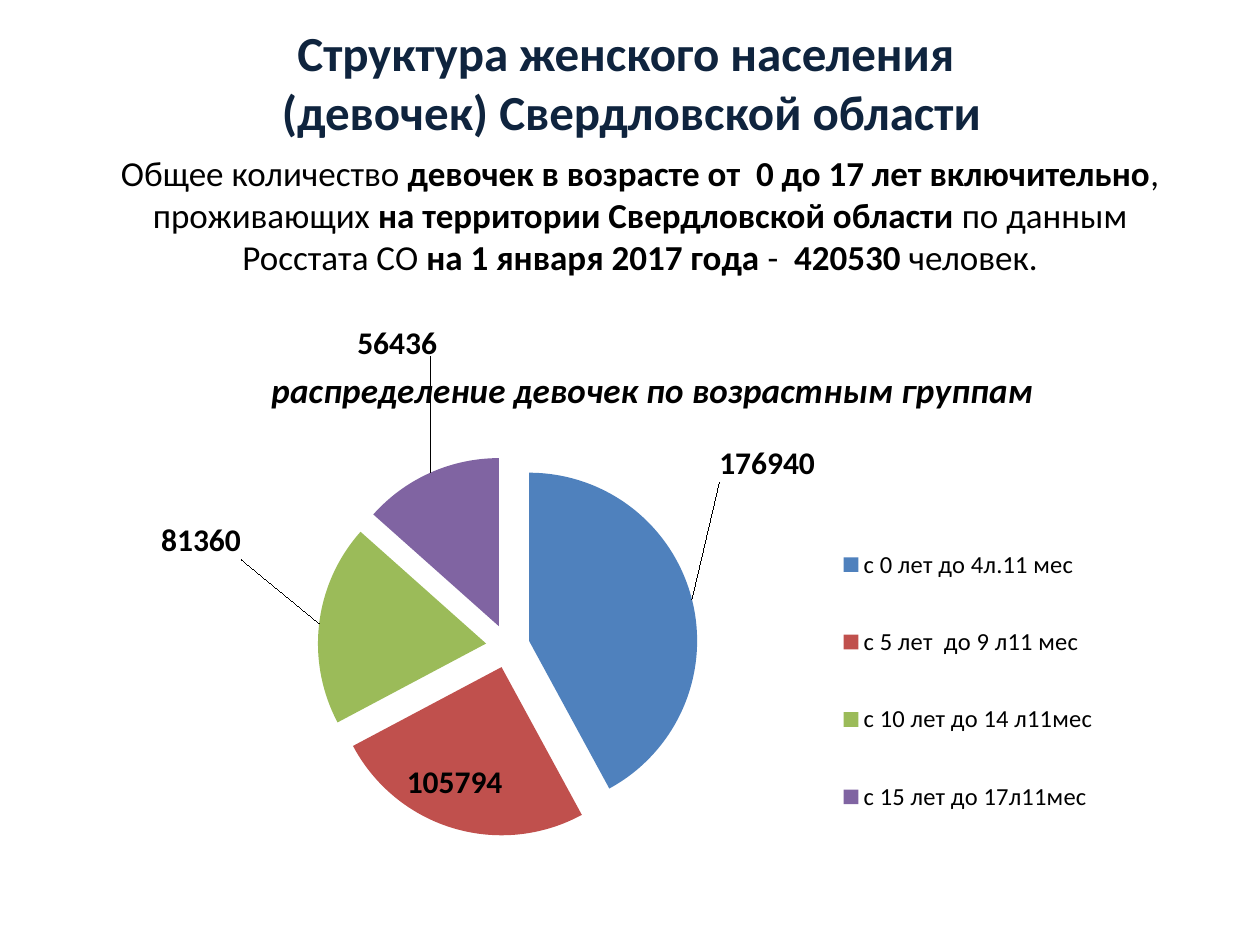
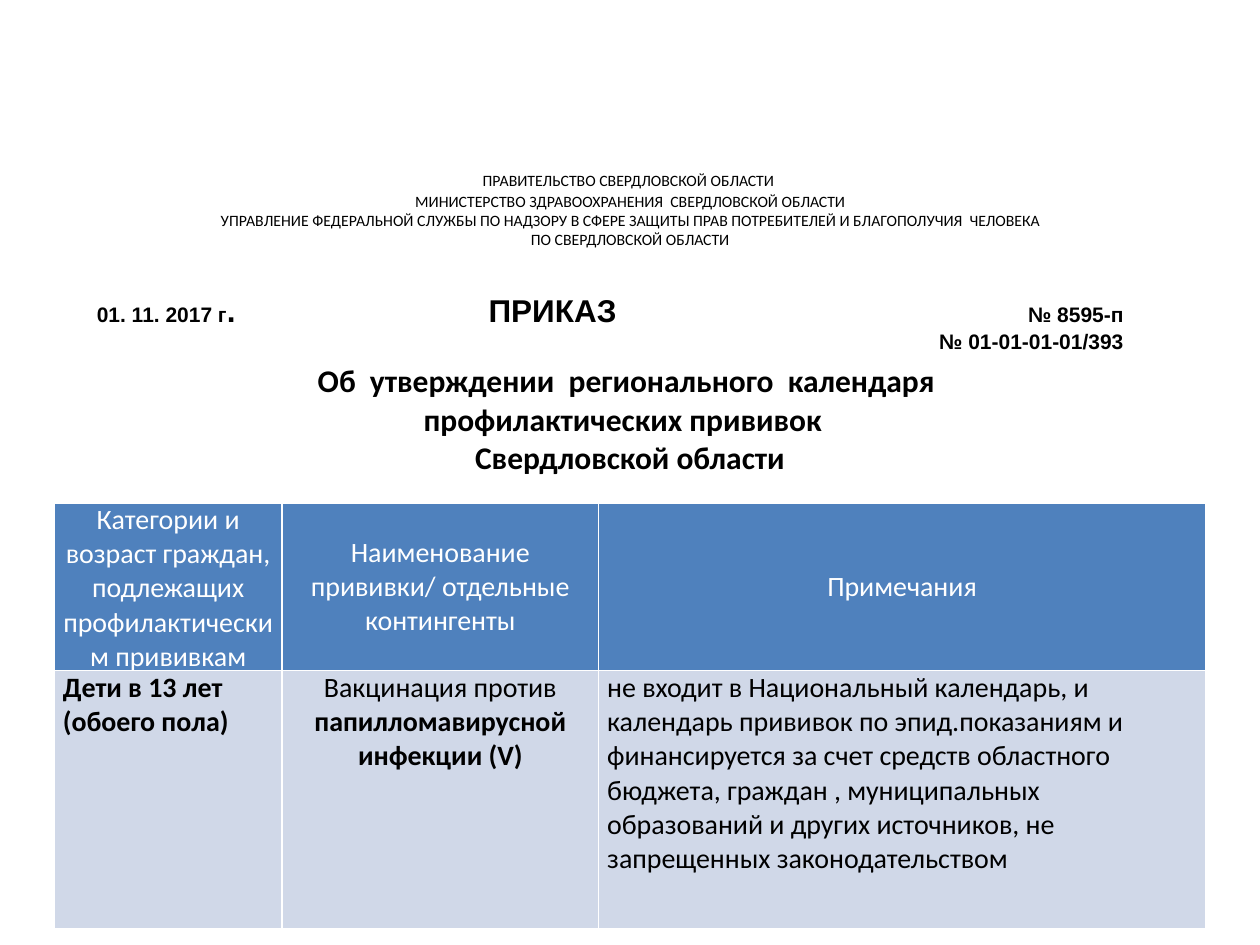
import pptx
import pptx.chart.data
import pptx.dml.color
import pptx.enum.chart
import pptx.enum.text
import pptx.oxml
import pptx.oxml.ns
import pptx.util
from lxml import etree

Inches = pptx.util.Inches
qn = pptx.oxml.ns.qn
CENTER = pptx.enum.text.PP_ALIGN.CENTER
LEFT = pptx.enum.text.PP_ALIGN.LEFT
MIDDLE = pptx.enum.text.MSO_ANCHOR.MIDDLE
TOP = pptx.enum.text.MSO_ANCHOR.TOP

BLACK, WHITE, NAVY = "000000", "FFFFFF", "0F243E"
BLUE, PALE_BLUE = "4F81BD", "D0D8E8"

AGE_GROUPS = [
    ("с 0 лет до 4л.11 мес", 176940, BLUE),
    ("с 5 лет  до 9 л11 мес", 105794, "C0504D"),
    ("с 10 лет до 14 л11мес", 81360, "9BBB59"),
    ("с 15 лет до 17л11мес", 56436, "8064A2"),
]
LABEL_SHIFTS = {0: (0.02, -0.2), 2: (-0.07, -0.11), 3: (0.01, -0.19)}


def rgb(value):
    return pptx.dml.color.RGBColor.from_string(value)


def format_font(font, size, color=BLACK, bold=False, italic=False, name="Calibri"):
    font.size = pptx.util.Pt(size)
    font.color.rgb = rgb(color)
    font.bold, font.italic, font.name = bold, italic, name


def add_text(para, text, **style):
    for index, line in enumerate(text.split("\n")):
        if index:
            para.add_line_break()
        span = para.add_run()
        span.text = line
        format_font(span.font, **style)


def write_paras(frame, paras, align=CENTER, **style):
    for index, spans in enumerate(paras):
        para = frame.add_paragraph() if index else frame.paragraphs[0]
        para.alignment = align
        for text, bold in spans:
            add_text(para, text, bold=bold, **style)


def add_box(page, box, anchor=TOP):
    frame = page.shapes.add_textbox(*map(Inches, box)).text_frame
    frame.word_wrap = True
    frame.vertical_anchor = anchor
    return frame


def add_table(page, box, widths, heights):
    table = page.shapes.add_table(len(heights), len(widths), *map(Inches, box)).table
    table.first_row = table.horz_banding = False
    for column, width in zip(table.columns, widths):
        column.width = Inches(width)
    for row, height in zip(table.rows, heights):
        row.height = Inches(height)
    return table


def format_cell(cell, paras, fill=None, anchor=TOP, margin=0.07, top=0, **style):
    cell.margin_left = cell.margin_right = Inches(margin)
    cell.margin_top, cell.margin_bottom = Inches(top), 0
    cell.vertical_anchor = anchor
    properties = cell._tc.get_or_add_tcPr()
    for side in ("lnL", "lnR", "lnT", "lnB"):
        line = etree.SubElement(properties, qn("a:" + side), w="12700")
        paint = etree.SubElement(line, qn("a:solidFill"))
        etree.SubElement(paint, qn("a:srgbClr"), val=WHITE)
    if fill:
        cell.fill.solid()
        cell.fill.fore_color.rgb = rgb(fill)
    else:
        cell.fill.background()
    write_paras(cell.text_frame, paras, **style)


def set_layout(parent, index, absolute=True, target=None, **lengths):
    for old in parent.findall(qn("c:layout")):
        parent.remove(old)
    layout = etree.Element(qn("c:layout"))
    manual = etree.SubElement(layout, qn("c:manualLayout"))
    if target:
        etree.SubElement(manual, qn("c:layoutTarget"), val=target)
    if absolute:
        for mode in ("xMode", "yMode"):
            etree.SubElement(manual, qn("c:" + mode), val="edge")
    for key, value in lengths.items():
        etree.SubElement(manual, qn("c:" + key), val=str(value))
    parent.insert(index, layout)


def add_age_chart(page, box):
    names, counts, colors = zip(*AGE_GROUPS)
    data = pptx.chart.data.CategoryChartData()
    data.categories = names
    data.add_series("Series 1", counts)
    kind = pptx.enum.chart.XL_CHART_TYPE.PIE
    chart = page.shapes.add_chart(kind, *map(Inches, box), data).chart
    format_font(chart.font, 18)

    chart.has_title = True
    add_text(chart.chart_title.text_frame.paragraphs[0],
             "распределение девочек по возрастным группам",
             size=20, bold=True, italic=True)
    set_layout(chart.chart_title._element, 1, x=0.12, y=0.06)

    chart.has_legend = True
    chart.legend.position = pptx.enum.chart.XL_LEGEND_POSITION.RIGHT
    chart.legend.include_in_layout = False
    format_font(chart.legend.font, 14)
    set_layout(chart.legend._element, 1, x=0.68, y=0.31, w=0.27, h=0.62)

    plot = chart.plots[0]
    plot.vary_by_categories = True
    set_layout(plot._element.getparent(), 0, target="inner",
               x=0.17, y=0.23, w=0.38, h=0.66)

    series = plot.series[0]
    explosion = etree.Element(qn("c:explosion"), val="13")
    series._element.find(qn("c:tx")).addnext(explosion)
    for index, color in enumerate(colors):
        fill = series.points[index].format.fill
        fill.solid()
        fill.fore_color.rgb = rgb(color)

    labels = series.data_labels
    labels.show_value = True
    labels.position = pptx.enum.chart.XL_LABEL_POSITION.BEST_FIT
    format_font(labels.font, 18, bold=True)
    for index in LABEL_SHIFTS:
        label = series.points[index].data_label
        label.position = pptx.enum.chart.XL_LABEL_POSITION.BEST_FIT
        format_font(label.font, 18, bold=True)
    for label, (x, y) in zip(series._element.iter(qn("c:dLbl")), LABEL_SHIFTS.values()):
        set_layout(label, 1, absolute=False, x=x, y=y)


def build_population_page(page):
    title = "Структура женского населения \n(девочек) Свердловской области"
    write_paras(add_box(page, (0.62, 0.21, 8.78, 0.87), MIDDLE),
                [[(title, True)]], size=28, color=NAVY)
    summary = [
        ("Общее количество ", False),
        ("девочек в возрасте от  0 до 17 лет включительно", True),
        (", проживающих ", False),
        ("на территории Свердловской области ", True),
        ("по данным Росстата СО ", False),
        ("на 1 января 2017 года ", True),
        ("-  ", False),
        ("420530 ", True),
        ("человек.", False),
    ]
    write_paras(add_box(page, (0.67, 1.15, 8.82, 1.11)), [summary], size=20)
    add_age_chart(page, (1.14, 2.57, 8.03, 4.57))


def add_issuers(page, box):
    issuers = [
        "ПРАВИТЕЛЬСТВО СВЕРДЛОВСКОЙ ОБЛАСТИ ",
        "МИНИСТЕРСТВО ЗДРАВООХРАНЕНИЯ  СВЕРДЛОВСКОЙ ОБЛАСТИ",
        "УПРАВЛЕНИЕ ФЕДЕРАЛЬНОЙ СЛУЖБЫ ПО НАДЗОРУ В СФЕРЕ ЗАЩИТЫ ПРАВ ПОТРЕБИТЕЛЕЙ "
        "И БЛАГОПОЛУЧИЯ  ЧЕЛОВЕКА ПО СВЕРДЛОВСКОЙ ОБЛАСТИ",
    ]
    cell = add_table(page, box, [box[2]], [box[3]]).cell(0, 0)
    format_cell(cell, [[(line, False)] for line in issuers], margin=0.05, top=0.17, size=9)
    cell.text_frame.paragraphs[1].line_spacing = pptx.util.Pt(12)


def add_order_line(page, box):
    frame = add_box(page, box, MIDDLE)
    lines = [
        [("01. 11. 2017 г", 12), (".\tПРИКАЗ", 18), ("\t№ 8595-п", 12)],
        [("\t\t№ 01-01-01-01/393", 12)],
    ]
    for index, spans in enumerate(lines):
        para = frame.add_paragraph() if index else frame.paragraphs[0]
        stops = etree.SubElement(para._p.get_or_add_pPr(), qn("a:tabLst"))
        for position, align in ((3.11, "l"), (8.15, "r")):
            etree.SubElement(stops, qn("a:tab"), pos=str(Inches(position)), algn=align)
        for text, size in spans:
            add_text(para, text, size=size, bold=True, name="Arial")


def add_subject(page, box):
    subject = [
        "Об  утверждении  регионального  календаря  профилактических прививок  ",
        "Свердловской области",
    ]
    cell = add_table(page, box, [box[2]], [box[3]]).cell(0, 0)
    format_cell(cell, [[(line, True)] for line in subject], size=18)


def add_vaccination_table(page, box):
    headings = [
        "Категории и возраст граждан, подлежащих профилактическим прививкам",
        "Наименование прививки/ отдельные контингенты",
        "Примечания",
    ]
    entries = [
        ([("Дети в 13 лет (обоего пола)", True)], LEFT),
        ([("Вакцинация против ", False), ("папилломавирусной инфекции (V)", True)], CENTER),
        ([("не входит в Национальный календарь, и календарь прививок по эпид.показаниям "
           "и финансируется за счет средств областного бюджета, граждан , муниципальных "
           "образований и других источников, не запрещенных законодательством", False)], LEFT),
    ]
    table = add_table(page, box, [1.81, 2.51, 4.82], [1.33, 2.05])
    for column, (heading, (spans, align)) in enumerate(zip(headings, entries)):
        format_cell(table.cell(0, column), [[(heading, False)]], fill=BLUE,
                    anchor=MIDDLE, size=16, color=WHITE)
        format_cell(table.cell(1, column), [spans], fill=PALE_BLUE, align=align, size=16)


def build_order_page(page):
    add_issuers(page, (1.63, 1.19, 6.74, 1))
    add_subject(page, (1.65, 2.88, 6.7, 0.9))
    add_order_line(page, (0.67, 2.02, 8.66, 1.08))
    add_vaccination_table(page, (0.43, 3.99, 9.13, 3.38))


def main():
    deck = pptx.Presentation()
    deck.slide_width, deck.slide_height = Inches(10), Inches(7.5)
    for build in (build_population_page, build_order_page):
        build(deck.slides.add_slide(deck.slide_layouts[6]))
    deck.save("out.pptx")


if __name__ == "__main__":
    main()
